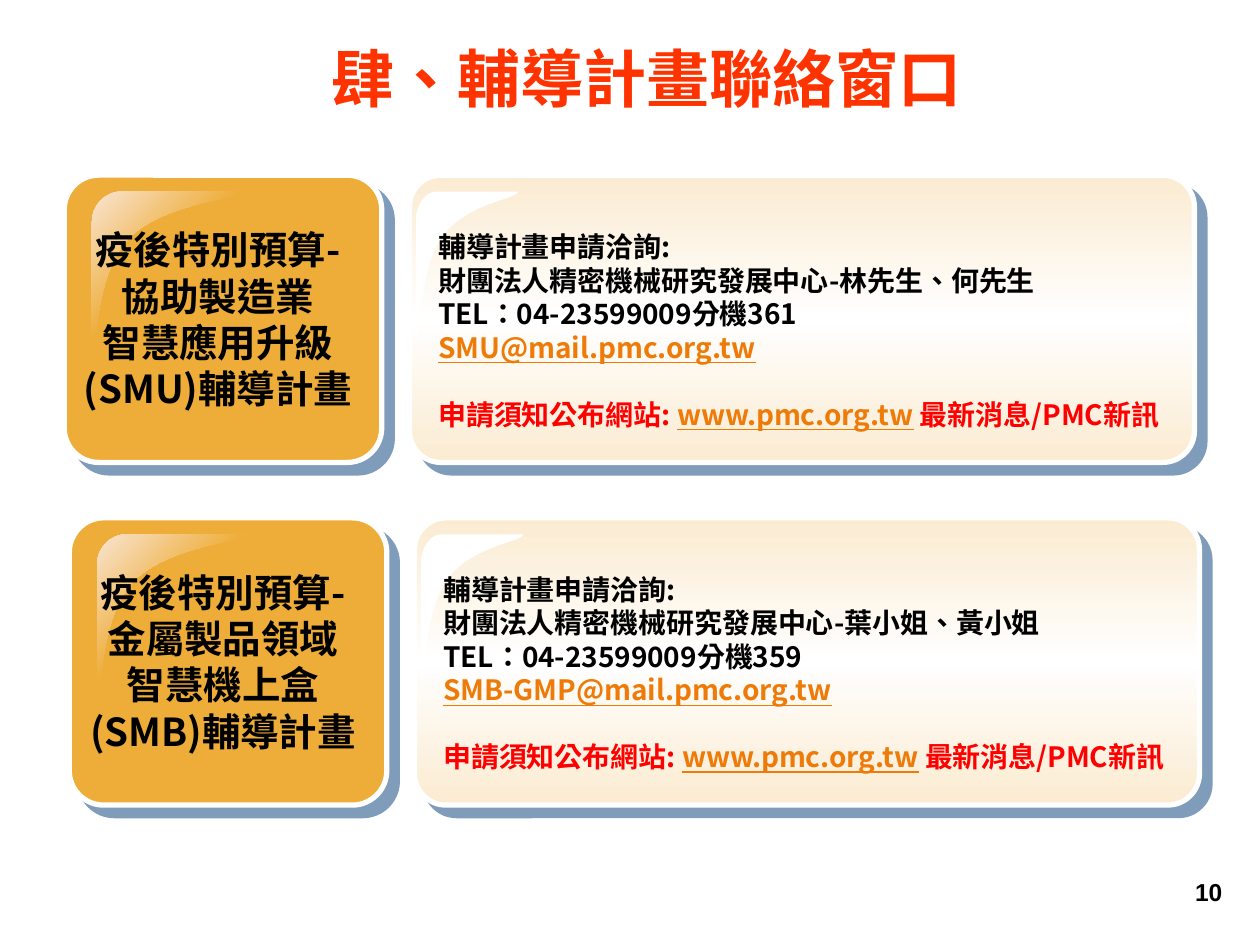
import pptx
import pptx.util
import pptx.dml.color
import pptx.enum.lang
import pptx.enum.shapes
import pptx.enum.text
import pptx.oxml
import pptx.oxml.ns

CJK = "Noto Sans CJK SC"
BLACK, RED, ORANGE = "000000", "FF0000", "EE7B08"
GOLD, CREAM, PEACH, WHITE = "EEAD38", "FBEBD1", "F9E5D3", "FFFFFF"
A = pptx.oxml.ns.nsdecls("a")
ALIGN = pptx.enum.text.PP_ALIGN
GLOSS = [(0.2, 0),
         (0.09, 0), (0, 0.09), (0, 0.2),
         (0, 0.98),
         (0.05, 1), (0.02, 0.52), (0.27, 0.29),
         (0.52, 0.07), (1, 0.05), (0.99, 0)]
GLOSS_CURVES = (0, 4, 7)


def rgb(value):
    return pptx.dml.color.RGBColor.from_string(value)


class Deck:
    cols, rows = 100, 75

    def __init__(self, prs):
        self.prs = prs
        self.s = prs.slides.add_slide(prs.slide_layouts[6])

    def x(self, cols):
        return round(self.prs.slide_width * cols / self.cols)

    def y(self, rows):
        return round(self.prs.slide_height * rows / self.rows)

    def place(self, box):
        left, top, width, height = box
        return self.x(left), self.y(top), self.x(width), self.y(height)

    def fill(self, sp, colors, angle=0):
        if len(colors) == 1:
            sp.fill.solid()
            sp.fill.fore_color.rgb = rgb(colors[0])
            return
        stops = "".join(
            f'<a:gs pos="{round(100000 * i / (len(colors) - 1))}"><a:srgbClr val="{c}"/></a:gs>'
            for i, c in enumerate(colors))
        sp.fill.background()
        props = sp._element.spPr
        blank = props.find(pptx.oxml.ns.qn("a:noFill"))
        props.replace(blank, pptx.oxml.parse_xml(
            f'<a:gradFill {A} rotWithShape="1"><a:gsLst>{stops}</a:gsLst>'
            f'<a:lin ang="{angle * 60000}" scaled="0"/></a:gradFill>'))

    def card(self, box, radius, colors, angle=0):
        sp = self.s.shapes.add_shape(
            pptx.enum.shapes.MSO_SHAPE.ROUNDED_RECTANGLE, *self.place(box))
        sp.adjustments[0] = radius
        self.fill(sp, colors, angle)
        sp.line.color.rgb = rgb(WHITE)
        sp.line.width = pptx.util.Pt(3)
        sp.shadow.inherit = False
        effects = sp._element.spPr.find(pptx.oxml.ns.qn("a:effectLst"))
        effects.append(pptx.oxml.parse_xml(
            f'<a:outerShdw {A} blurRad="0" dist="{pptx.util.Pt(8.5)}" dir="2700000" '
            'algn="ctr" rotWithShape="0"><a:srgbClr val="003B76">'
            '<a:alpha val="50000"/></a:srgbClr></a:outerShdw>'))

    def gloss(self, box, colors, angle=0):
        left, top, width, height = box
        start, *points = [(self.x(left + a * width), self.y(top + b * height))
                          for a, b in GLOSS]
        builder = self.s.shapes.build_freeform(*start)
        builder.add_line_segments(points, close=True)
        sp = builder.convert_to_shape()
        segments = list(sp._element.iter(pptx.oxml.ns.qn("a:lnTo")))
        for first in GLOSS_CURVES:
            curve = pptx.oxml.parse_xml(f"<a:cubicBezTo {A}/>")
            segments[first].addprevious(curve)
            for segment in segments[first:first + 3]:
                curve.append(segment[0])
                segment.getparent().remove(segment)
        self.fill(sp, colors, angle)
        sp.line.fill.background()
        sp.shadow.inherit = False

    def text(self, box, paragraphs, size, align=ALIGN.LEFT, font=CJK):
        tf = self.s.shapes.add_textbox(*self.place(box)).text_frame
        tf.word_wrap = True
        tf.vertical_anchor = pptx.enum.text.MSO_ANCHOR.MIDDLE
        for i, runs in enumerate(paragraphs):
            p = tf.add_paragraph() if i else tf.paragraphs[0]
            p.alignment = align
            for words, color in runs:
                r = p.add_run()
                r.text = words
                r.font.size = pptx.util.Pt(size)
                r.font.bold = True
                r.font.name = font
                r.font.color.rgb = rgb(color)
                r.font.underline = color == ORANGE
                r.font.language_id = pptx.enum.lang.MSO_LANGUAGE_ID.TRADITIONAL_CHINESE
                r._r.get_or_add_rPr().find(pptx.oxml.ns.qn("a:latin")).addnext(
                    pptx.oxml.parse_xml(f'<a:ea {A} typeface="{font}"/>'))
        return tf

    def program(self, dx, dy, name, people, extension, mail):
        def at(left, top, width, height):
            return left + dx, top + dy, width, height

        self.card(at(5.1, 13.9, 25.2, 22.8), 0.12, [GOLD])
        self.gloss(at(7.3, 15.2, 11.8, 11.9), [PEACH, GOLD, PEACH], 45)
        self.text(at(5.6, 17.4, 23.4, 15.8), [[(line, BLACK)] for line in name],
                  22, ALIGN.CENTER)
        self.card(at(32.5, 13.9, 62.3, 22.8), 0.11, [CREAM, WHITE, CREAM], 90)
        self.gloss(at(33, 15.2, 8.2, 11.8), [WHITE])
        tf = self.text(at(33.8, 17.6, 62.6, 17.2), [
            [("輔導計畫申請洽詢:", BLACK)],
            [(f"財團法人精密機械研究發展中心-{people}", BLACK)],
            [(f"TEL：04-23599009分機{extension}", BLACK)],
            [(mail, ORANGE)],
            [("申請須知公布網站: ", RED), ("www.pmc.org.tw", ORANGE),
             (" 最新消息/PMC新訊", RED)],
        ], 16)
        tf.paragraphs[-1].space_before = pptx.util.Pt(19)


def main():
    prs = pptx.Presentation()
    prs.slide_width = pptx.util.Inches(10)
    prs.slide_height = pptx.util.Inches(7.5)
    deck = Deck(prs)
    deck.text((8.3, 3.2, 86, 5.9), [[("肆、輔導計畫聯絡窗口", "FF3300")]], 36, ALIGN.CENTER)
    programs = [
        (["疫後特別預算-", "協助製造業", "智慧應用升級", "(SMU)輔導計畫"],
         "林先生、何先生", 361, "SMU@mail.pmc.org.tw"),
        (["疫後特別預算-", "金屬製品領域", "智慧機上盒", "(SMB)輔導計畫"],
         "葉小姐、黃小姐", 359, "SMB-GMP@mail.pmc.org.tw"),
    ]
    for i, details in enumerate(programs):
        deck.program(0.4 * i, 27.2 * i, *details)
    deck.text((77.2, 68.3, 20.8, 5), [[("10", BLACK)]], 14, ALIGN.RIGHT, "Arial")
    prs.save("out.pptx")


if __name__ == "__main__":
    main()
